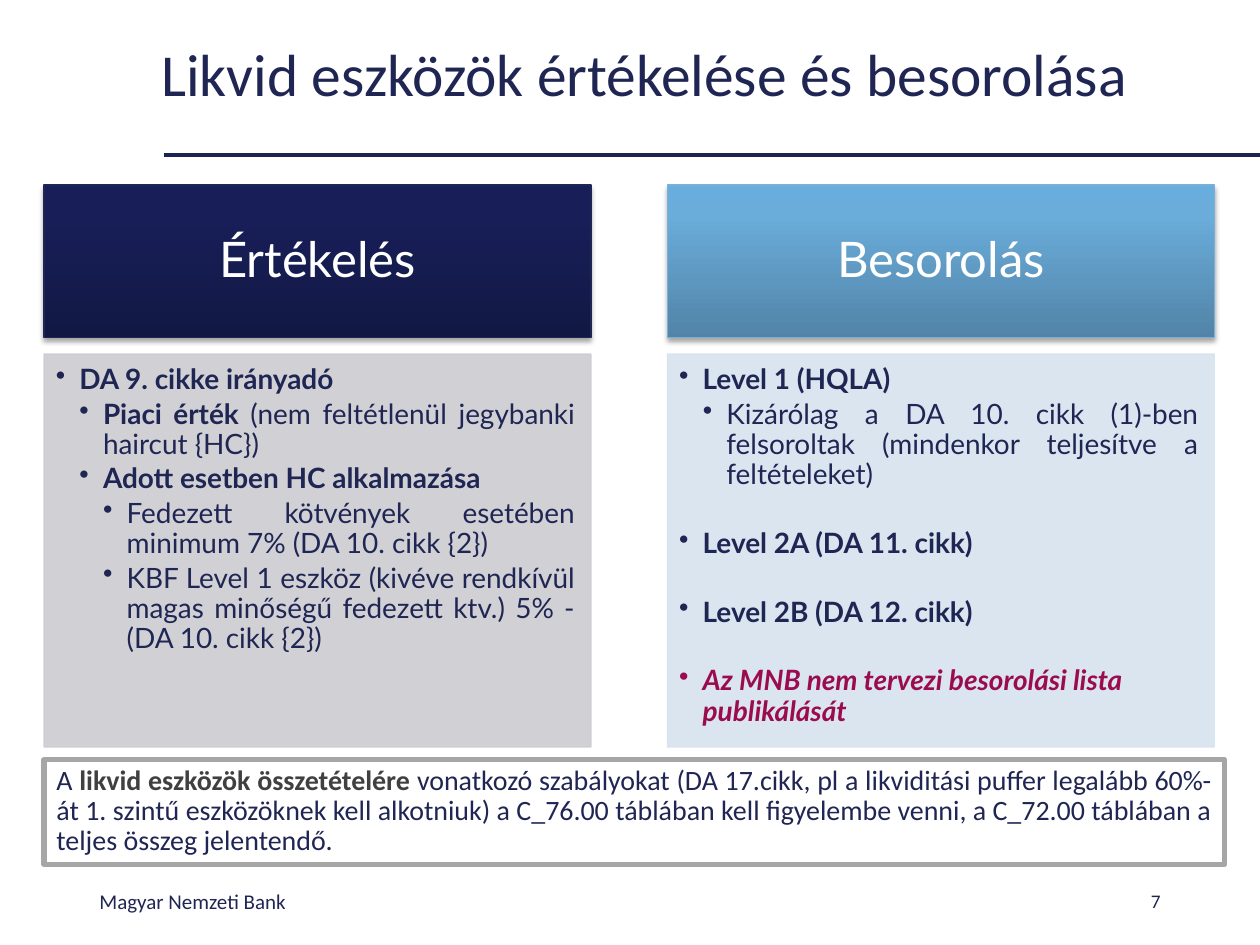
from dataclasses import dataclass
from lxml.etree import SubElement
from pptx import Presentation
from pptx.dml.color import RGBColor
from pptx.enum.shapes import MSO_CONNECTOR as CONN, MSO_SHAPE as SHAPE
from pptx.enum.text import MSO_ANCHOR as ANCHOR, PP_ALIGN as ALIGN
from pptx.oxml.ns import qn
from pptx.util import Pt


@dataclass(frozen=True)
class Theme:
    ink: str = "202653"
    rule: str = "1E2452"
    white: str = "FFFFFF"
    accent: str = "9B0B4F"
    strong: str = "404040"
    frame: str = "A6A6A6"
    shadow: str = "000000"
    sans: str = "Calibri"
    card: str = "Lato"
    title: int = 34
    head: int = 28
    body: int = 16
    footer: int = 12
    number: int = 11


T = Theme()
TITLE = "Likvid eszközök értékelése és besorolása"
FOOTER = "Magyar Nemzeti Bank"
NUMBER = "7"
NOTE = [
    ("A ", False),
    ("likvid eszközök összetételére ", True),
    ("vonatkozó szabályokat (DA 17.cikk, pl a likviditási puffer legalább 60%-át 1. szintű "
     "eszközöknek kell alkotniuk) a C_76.00 táblában kell figyelembe venni, a C_72.00 táblában "
     "a teljes összeg jelentendő.", False),
]
COLUMNS = [
    dict(head="Értékelés", line="202653", panel="CDCDD1",
         stops=[(0, "121844"), (80, "181F58"), (100, "161E59")],
         items=[
             dict(level=1, bold="DA 9. cikke irányadó"),
             dict(level=2, bold="Piaci érték ", plain="(nem feltétlenül jegybanki haircut {HC})"),
             dict(level=2, bold="Adott esetben HC alkalmazása"),
             dict(level=3, plain="Fedezett kötvények esetében minimum 7% (DA 10. cikk {2})"),
             dict(level=3, plain="KBF Level 1 eszköz (kivéve rendkívül magas minőségű "
                                 "fedezett ktv.) 5% - (DA 10. cikk {2})"),
         ]),
    dict(head="Besorolás", line="7BAFD4", panel="D7E3EF",
         stops=[(0, "5284A8"), (80, "6AACDA"), (100, "69ADDE")],
         items=[
             dict(level=1, bold="Level 1 (HQLA)"),
             dict(level=2, plain="Kizárólag a DA 10. cikk (1)-ben felsoroltak "
                                 "(mindenkor teljesítve a feltételeket)"),
             dict(level=1, bold="Level 2A (DA 11. cikk)", gap=True),
             dict(level=1, bold="Level 2B (DA 12. cikk)", gap=True),
             dict(level=1, bold="Az MNB nem tervezi besorolási lista publikálását",
                  gap=True, accent=True),
         ]),
]
LEFT, COL_W, COL_STEP = 25.2, 312.5, 356.2
HEAD_Y, HEAD_H = 105.8, 87.1
PANEL_Y, PANEL_H = 202.3, 224.6
INDENT, GAP = 13.5, 19.6


def rgb(value):
    return RGBColor.from_string(value)


def add_run(p, text, size, font=T.sans, color=T.ink, bold=False, italic=False):
    r = p.add_run()
    r.text = text
    r.font.size, r.font.name = Pt(size), font
    r.font.bold, r.font.italic = bold, italic
    r.font.color.rgb = rgb(color)


def set_frame(s, anchor, insets=(7.2, 3.6, 7.2, 3.6)):
    tf = s.text_frame
    tf.word_wrap, tf.vertical_anchor = True, anchor
    tf.margin_left, tf.margin_top, tf.margin_right, tf.margin_bottom = map(Pt, insets)
    return tf


def add_label(shapes, box, text, size, align=ALIGN.LEFT):
    s = shapes.add_textbox(*map(Pt, box))
    p = set_frame(s, ANCHOR.MIDDLE).paragraphs[0]
    p.alignment = align
    add_run(p, text, size)
    return p


def add_box(shapes, box, line, width):
    s = shapes.add_shape(SHAPE.RECTANGLE, *map(Pt, box))
    s.shadow.inherit = False
    s.fill.background()
    s.line.color.rgb = rgb(line)
    s.line.width = Pt(width)
    return s


def add_color(parent, color, alpha=None):
    c = SubElement(parent, qn("a:srgbClr"), val=color)
    if alpha:
        SubElement(c, qn("a:alpha"), val=str(alpha * 1000))


def set_gradient(s, stops):
    s.fill.gradient()
    grad = s._element.spPr.find(qn("a:gradFill"))
    for child in list(grad):
        grad.remove(child)
    gs_list = SubElement(grad, qn("a:gsLst"))
    for pos, color in stops:
        add_color(SubElement(gs_list, qn("a:gs"), pos=str(pos * 1000)), color)
    SubElement(grad, qn("a:lin"), ang=str(270 * 60000), scaled="0")


def add_shadow(s):
    effects = s._element.spPr.find(qn("a:effectLst"))
    shadow = SubElement(effects, qn("a:outerShdw"), blurRad=str(Pt(3.1)), dist=str(Pt(1.8)),
                        dir=str(90 * 60000), rotWithShape="0")
    add_color(shadow, T.shadow, 35)


def add_head(shapes, x, col):
    s = add_box(shapes, (x, HEAD_Y, COL_W, HEAD_H), col["line"], 0.75)
    set_gradient(s, col["stops"])
    add_shadow(s)
    p = set_frame(s, ANCHOR.MIDDLE, (15.8, 8.6, 15.8, 8.6)).paragraphs[0]
    p.alignment, p.line_spacing = ALIGN.CENTER, 0.9
    add_run(p, col["head"], T.head, T.card, T.white)


def add_item(p, item):
    accent = item.get("accent", False)
    p.alignment = ALIGN.LEFT if accent else ALIGN.JUSTIFY
    p.line_spacing, p.space_after = 0.9, Pt(2.4)
    if item.get("gap"):
        p.space_before = Pt(GAP)
    pPr = p._p.get_or_add_pPr()
    pPr.set("marL", str(Pt(INDENT * item["level"])))
    pPr.set("indent", str(-Pt(INDENT)))
    SubElement(pPr, qn("a:buChar"), char="•")
    color = T.accent if accent else T.ink
    for key in ("bold", "plain"):
        if key in item:
            add_run(p, item[key], T.body, T.card, color, key == "bold", accent)


def add_panel(shapes, x, col):
    s = add_box(shapes, (x, PANEL_Y, COL_W, PANEL_H), col["panel"], 0.75)
    s.fill.solid()
    s.fill.fore_color.rgb = rgb(col["panel"])
    for c in s._element.spPr.iter(qn("a:srgbClr")):
        SubElement(c, qn("a:alpha"), val="90000")
    tf = set_frame(s, ANCHOR.TOP, (6.7, 6.7, 9, 10))
    for i, item in enumerate(col["items"]):
        add_item(tf.add_paragraph() if i else tf.paragraphs[0], item)


def add_note(shapes):
    s = add_box(shapes, (LEFT, 434.2, 674.6, 59.8), T.frame, 3)
    p = set_frame(s, ANCHOR.TOP).paragraphs[0]
    p.alignment, p.line_spacing = ALIGN.JUSTIFY, 0.9
    for text, bold in NOTE:
        add_run(p, text, T.body, color=T.strong if bold else T.ink, bold=bold)


def main():
    prs = Presentation()
    prs.slide_width, prs.slide_height = Pt(720), Pt(540)
    shapes = prs.slides.add_slide(prs.slide_layouts[6]).shapes
    rule = shapes.add_connector(CONN.STRAIGHT, Pt(93.6), Pt(88.6), Pt(720), Pt(88.6))
    rule.line.color.rgb, rule.line.width = rgb(T.rule), Pt(2.25)
    SubElement(rule._element.spPr, qn("a:effectLst"))
    add_label(shapes, (85, 14.4, 586.8, 59.8), TITLE, T.title).line_spacing = 0.9
    add_label(shapes, (49.7, 500.4, 243.4, 28.8), FOOTER, T.footer)
    add_label(shapes, (508.3, 500.4, 162, 28.8), NUMBER, T.number, ALIGN.RIGHT)
    for i, col in enumerate(COLUMNS):
        x = LEFT + i * COL_STEP
        add_head(shapes, x, col)
        add_panel(shapes, x, col)
    add_note(shapes)
    prs.save("out.pptx")


if __name__ == "__main__":
    main()
